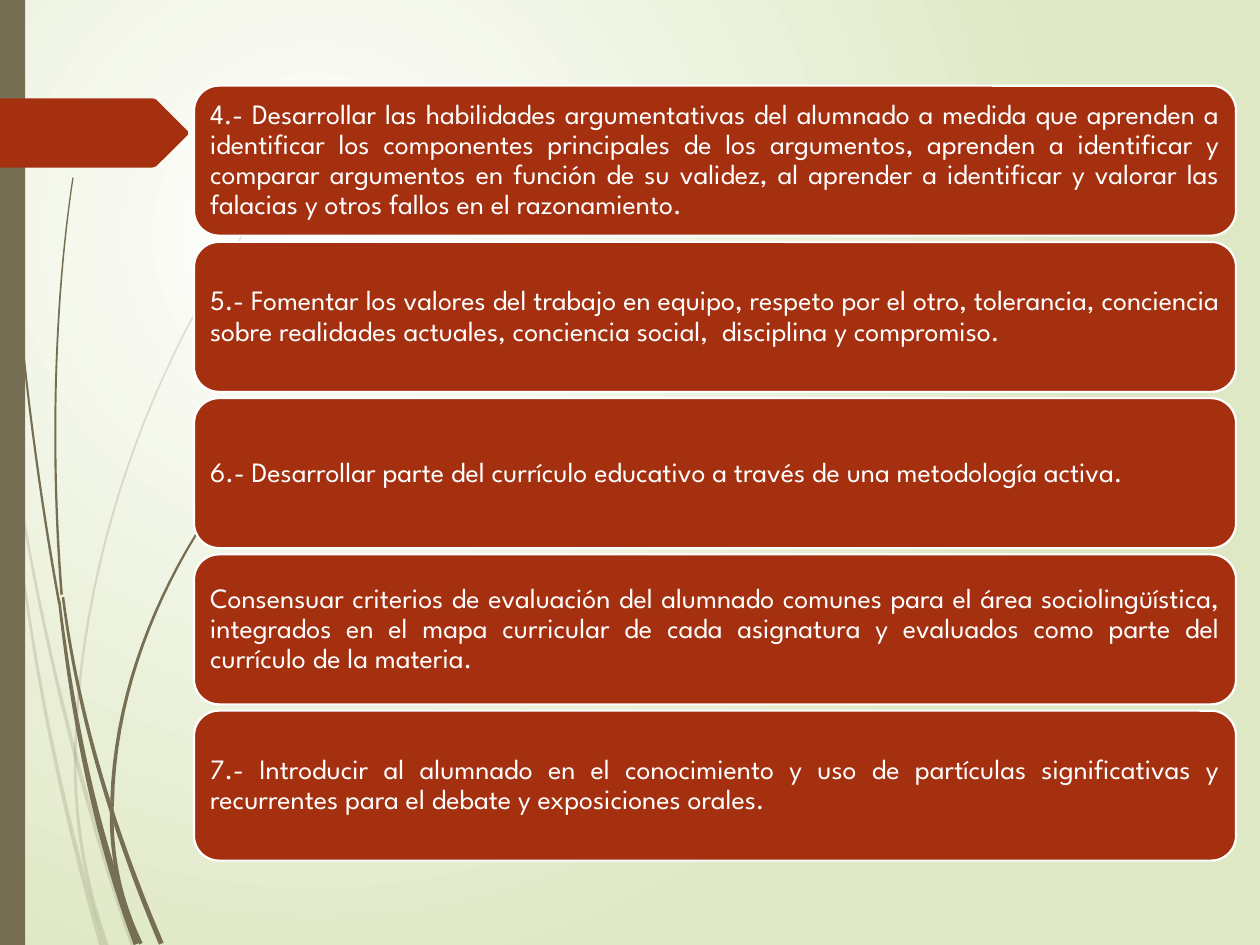
import math
from dataclasses import dataclass

from lxml import etree
from pptx import Presentation
from pptx import util as u
from pptx.dml.color import RGBColor
from pptx.enum import shapes, text
from pptx.oxml import ns

PX = 9144
CURVE_STEPS = 24
FONT = "League Spartan"
COLORS = {"white": "FFFFFF", "leaf": "DFE8C4", "stem": "766F54", "brick": "A53010"}

Point = tuple[float, float]


@dataclass(frozen=True)
class Strand:
    start: Point
    pull_start: Point
    pull_end: Point
    end: Point
    start_width: int
    end_width: int


@dataclass(frozen=True)
class Plant:
    opacity: int
    strands: tuple[Strand, ...]


@dataclass(frozen=True)
class Card:
    wording: str
    align: text.PP_ALIGN = text.PP_ALIGN.JUSTIFY


PLANTS = (
    Plant(20, (
        Strand((1, 290), (17, 430), (53, 600), (106, 751), 1, 4),
        Strand((8, 350), (17, 490), (45, 625), (81, 751), 1, 4),
        Strand((217, 153), (129, 265), (65, 430), (60, 590), 1, 2),
        Strand((60, 590), (58, 650), (68, 702), (85, 751), 2, 3),
    )),
    Plant(100, (
        Strand((3, 0), (3, 160), (20, 330), (47, 479), 1, 2),
        Strand((47, 477), (58, 570), (75, 660), (109, 749), 2, 6),
        Strand((50, 474), (61, 560), (86, 650), (128, 749), 2, 4),
        Strand((58, 141), (43, 240), (40, 360), (49, 472), 1, 2),
        Strand((216, 344), (151, 415), (92, 520), (89, 636), 1, 3),
        Strand((89, 636), (87, 675), (95, 715), (112, 749), 3, 3),
    )),
)
PENNANT = ((149, 107), (124, 132), (121, 133), (0, 133), (0, 78), (121, 78), (124, 79), (149, 104))
CARDS = (
    Card("4.- Desarrollar las habilidades argumentativas del alumnado a medida que aprenden a "
         "identificar los componentes principales de los argumentos, aprenden a identificar y "
         "comparar argumentos en función de su validez, al aprender a identificar y valorar las "
         "falacias y otros fallos en el razonamiento."),
    Card("5.- Fomentar los valores del trabajo en equipo, respeto por el otro, tolerancia, "
         "conciencia sobre realidades actuales, conciencia social,  disciplina y compromiso."),
    Card("6.- Desarrollar parte del currículo educativo a través de una metodología activa.",
         text.PP_ALIGN.LEFT),
    Card("Consensuar criterios de evaluación del alumnado comunes para el área sociolingüística, "
         "integrados en el mapa curricular de cada asignatura y evaluados como parte del "
         "currículo de la materia."),
    Card("7.- Introducir al alumnado en el conocimiento y uso de partículas significativas y "
         "recurrentes para el debate y exposiciones orales."),
)


def paint(shape, color: str, opacity: int = 100) -> None:
    shape.shadow.inherit = False
    shape.fill.solid()
    shape.fill.fore_color.rgb = RGBColor.from_string(COLORS[color])
    shape.line.fill.background()
    if opacity < 100:
        tint = shape.element.spPr.find(".//" + ns.qn("a:srgbClr"))
        etree.SubElement(tint, ns.qn("a:alpha"), val=str(opacity * 1000))


def blend(knots: tuple[Point, ...], weights: tuple[float, ...]) -> Point:
    x, y = (sum(w * knot[axis] for w, knot in zip(weights, knots)) for axis in (0, 1))
    return x, y


def strand_outline(strand: Strand) -> list[Point]:
    knots = (strand.start, strand.pull_start, strand.pull_end, strand.end)
    legs = tuple((b[0] - a[0], b[1] - a[1]) for a, b in zip(knots, knots[1:]))
    left, right = [], []
    for step in range(CURVE_STEPS + 1):
        t = step / CURVE_STEPS
        s = 1 - t
        x, y = blend(knots, (s ** 3, 3 * s * s * t, 3 * s * t * t, t ** 3))
        dx, dy = blend(legs, (s * s, 2 * s * t, t * t))
        half = (s * strand.start_width + t * strand.end_width) / 2 / math.hypot(dx, dy)
        left.append((x - dy * half, y + dx * half))
        right.append((x + dy * half, y - dx * half))
    return left + right[::-1]


def draw_outline(holder, points, color: str, opacity: int = 100) -> None:
    corners = [(round(x * PX), round(y * PX)) for x, y in points]
    builder = holder.build_freeform(*corners[0], scale=1.0)
    builder.add_line_segments(corners[1:], close=True)
    paint(builder.convert_to_shape(), color, opacity)


def draw_plant(page, plant: Plant) -> None:
    group = page.shapes.add_group_shape()
    for strand in plant.strands:
        draw_outline(group.shapes, strand_outline(strand), "stem", plant.opacity)


def draw_card(holder, card: Card, top: int) -> None:
    box = holder.add_shape(shapes.MSO_SHAPE.ROUNDED_RECTANGLE, 154 * PX, top * PX, 827 * PX, 119 * PX)
    paint(box, "brick")
    box.line.color.rgb = RGBColor.from_string(COLORS["white"])
    box.line.width = u.Pt(1.25)
    frame = box.text_frame
    frame.word_wrap = True
    frame.vertical_anchor = text.MSO_ANCHOR.MIDDLE
    frame.margin_left = frame.margin_right = frame.margin_top = frame.margin_bottom = 7 * PX
    frame.text = card.wording
    para = frame.paragraphs[0]
    para.alignment = card.align
    para.line_spacing = 0.9
    span = para.runs[0]
    span.font.name = FONT
    span.font.size = u.Pt(16)
    span.font.color.rgb = RGBColor.from_string(COLORS["white"])


def draw_background(page) -> None:
    fill = page.background.fill
    fill.gradient()
    for stop, color in zip(fill.gradient_stops, ("white", "leaf")):
        stop.color.rgb = RGBColor.from_string(COLORS[color])
    gradient = page.element.find(".//" + ns.qn("a:gradFill"))
    gradient.remove(gradient.find(ns.qn("a:lin")))
    circle = etree.SubElement(gradient, ns.qn("a:path"), path="circle")
    etree.SubElement(circle, ns.qn("a:fillToRect"), l="50000", t="50000", r="100000", b="100000")


def main() -> None:
    deck = Presentation()
    deck.slide_width, deck.slide_height = 1000 * PX, 750 * PX
    page = deck.slides.add_slide(deck.slide_layouts[6])
    draw_background(page)
    for plant in PLANTS:
        draw_plant(page, plant)
    paint(page.shapes.add_shape(shapes.MSO_SHAPE.RECTANGLE, 0, 0, 20 * PX, 750 * PX), "stem")
    draw_outline(page.shapes, PENNANT, "brick")
    group = page.shapes.add_group_shape()
    for row, card in enumerate(CARDS):
        draw_card(group.shapes, card, 68 + 124 * row)
    deck.save("out.pptx")


if __name__ == "__main__":
    main()
